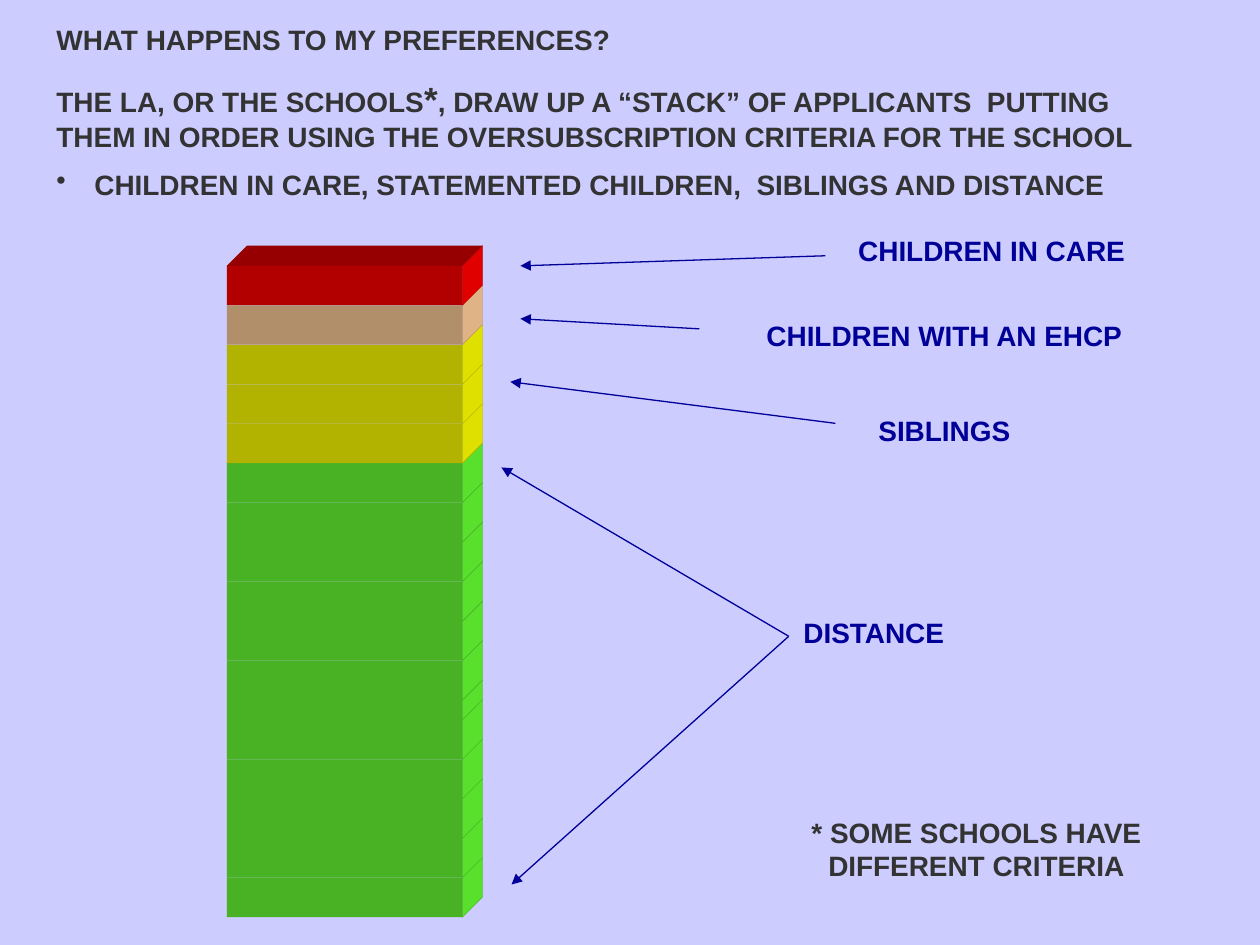
from dataclasses import dataclass
from lxml.etree import SubElement
from pptx import Presentation
from pptx.dml.color import RGBColor
from pptx.enum.shapes import MSO_CONNECTOR, MSO_SHAPE
from pptx.enum.text import MSO_AUTO_SIZE, PP_ALIGN
from pptx.oxml.ns import qn
from pptx.util import Inches, Pt


@dataclass(frozen=True)
class Theme:
    font: str = "Arial"
    size: int = 16
    star: int = 20
    space: int = 18
    thin: float = 0.75
    seam: float = 0.25
    back: str = "CCCCFF"
    ink: str = "333333"
    navy: str = "000099"
    green: tuple = ("48B224", "59E02D")
    yellow: tuple = ("B2B200", "E0E000")
    tan: tuple = ("B28F6B", "E0B387")
    red: tuple = ("B20000", "E00000")
    roof: str = "960000"


def tint(code):
    return RGBColor.from_string(code)


def write(para, text, size, color, font):
    run = para.add_run()
    run.text = text
    run.font.name = font
    run.font.size = Pt(size)
    run.font.bold = True
    run.font.color.rgb = tint(color)


class Deck:
    def __init__(self, theme):
        self.theme = theme
        self.file = Presentation()
        self.file.slide_width, self.file.slide_height = Inches(10), Inches(7.5)
        self.slide = self.file.slides.add_slide(self.file.slide_layouts[6])
        fill = self.slide.background.fill
        fill.solid()
        fill.fore_color.rgb = tint(theme.back)

    def text(self, spot, paras, color, align=PP_ALIGN.LEFT, wrap=True):
        box = self.slide.shapes.add_textbox(*map(Inches, spot))
        frame = box.text_frame
        frame.word_wrap = wrap
        frame.auto_size = MSO_AUTO_SIZE.SHAPE_TO_FIT_TEXT
        for row, (gap, runs) in enumerate(paras):
            para = frame.add_paragraph() if row else frame.paragraphs[0]
            para.alignment = align
            para.space_before = Pt(gap)
            for words, size in runs:
                write(para, words, size=size, color=color, font=self.theme.font)
        return frame

    def bullet(self, para, indent):
        props = para._p.get_or_add_pPr()
        props.set("marL", str(Inches(indent)))
        props.set("indent", str(-Inches(indent)))
        SubElement(props, qn("a:buChar"), char="•")

    def paint(self, shape, color, edge=None):
        shape.shadow.inherit = False
        shape.fill.solid()
        shape.fill.fore_color.rgb = tint(color)
        if edge:
            shape.line.color.rgb = tint(edge)
            shape.line.width = Pt(self.theme.seam)
        else:
            shape.line.fill.background()

    def block(self, spot, color):
        rect = self.slide.shapes.add_shape(MSO_SHAPE.RECTANGLE, *map(Inches, spot))
        self.paint(rect, color)

    def face(self, points, color, edge=None):
        first, *rest = [(Inches(x), Inches(y)) for x, y in points]
        pen = self.slide.shapes.build_freeform(*first)
        pen.add_line_segments(rest, close=True)
        self.paint(pen.convert_to_shape(), color, edge)

    def arrow(self, start, end):
        line = self.slide.shapes.add_connector(
            MSO_CONNECTOR.STRAIGHT, *map(Inches, start + end))
        line.line.color.rgb = tint(self.theme.navy)
        line.line.width = Pt(self.theme.thin)
        SubElement(line.line._get_or_add_ln(), qn("a:tailEnd"), type="triangle")
        SubElement(line._element.spPr, qn("a:effectLst"))

    def stack(self, left, base, width, unit, depth, layers):
        right = left + width
        low = base
        for (front, side), part in layers:
            high = low - unit * part
            self.block((left, high, width, low - high), front)
            self.face([(right, high), (right + depth, high - depth),
                       (right + depth, low - depth), (right, low)], side, front)
            low = high
        self.face([(left, low), (left + depth, low - depth),
                   (right + depth, low - depth), (right, low)], self.theme.roof)


def main():
    theme = Theme()
    deck = Deck(theme)
    size = theme.size

    head = deck.text((0.35, 0.13, 9.13, 1.54), [
        (0, [("WHAT HAPPENS TO MY PREFERENCES?", size)]),
        (12, [("THE LA, OR THE SCHOOLS", size), ("*", theme.star),
              (", DRAW UP A “STACK” OF APPLICANTS  PUTTING THEM IN ORDER USING "
               "THE OVERSUBSCRIPTION CRITERIA FOR THE SCHOOL", size)]),
        (8.5, [(" CHILDREN IN CARE, STATEMENTED CHILDREN,  SIBLINGS AND DISTANCE", size)]),
    ], theme.ink)
    deck.bullet(head.paragraphs[2], 0.24)

    layers = [(theme.green, 1)] * 5 + [(theme.green, 0.5)] + [(theme.green, 1)] * 6
    layers += [(theme.yellow, 1)] * 3 + [(theme.tan, 1), (theme.red, 1)]
    unit = (7.28 - 2.11) / sum(part for _, part in layers)
    deck.stack(1.8, 7.28, 1.87, unit, 0.16, layers)

    labels = [
        ((6.71, 1.78, 2.39, 0.4), [("CHILDREN IN CARE", size), (" ", theme.space)]),
        ((5.97, 2.48, 3.05, 0.37), [("CHILDREN WITH AN EHCP", size)]),
        ((6.87, 3.23, 1.25, 0.37), [("SIBLINGS", size)]),
        ((6.27, 4.84, 1.33, 0.37), [("DISTANCE", size)]),
    ]
    for spot, runs in labels:
        deck.text(spot, [(0, runs)], theme.navy, PP_ALIGN.CENTER, wrap=False)

    fork = (6.26, 5.05)
    for start, end in [((6.55, 2.03), (4.13, 2.11)), ((5.55, 2.61), (4.13, 2.53)),
                       ((6.63, 3.36), (4.05, 3.03)), (fork, (3.98, 3.71)),
                       (fork, (4.06, 7.02))]:
        deck.arrow(start, end)

    deck.text((6.02, 6.42, 3.46, 0.64),
              [(0, [("* SOME SCHOOLS HAVE DIFFERENT CRITERIA", size)])],
              theme.ink, PP_ALIGN.CENTER)
    deck.file.save("out.pptx")


if __name__ == "__main__":
    main()
